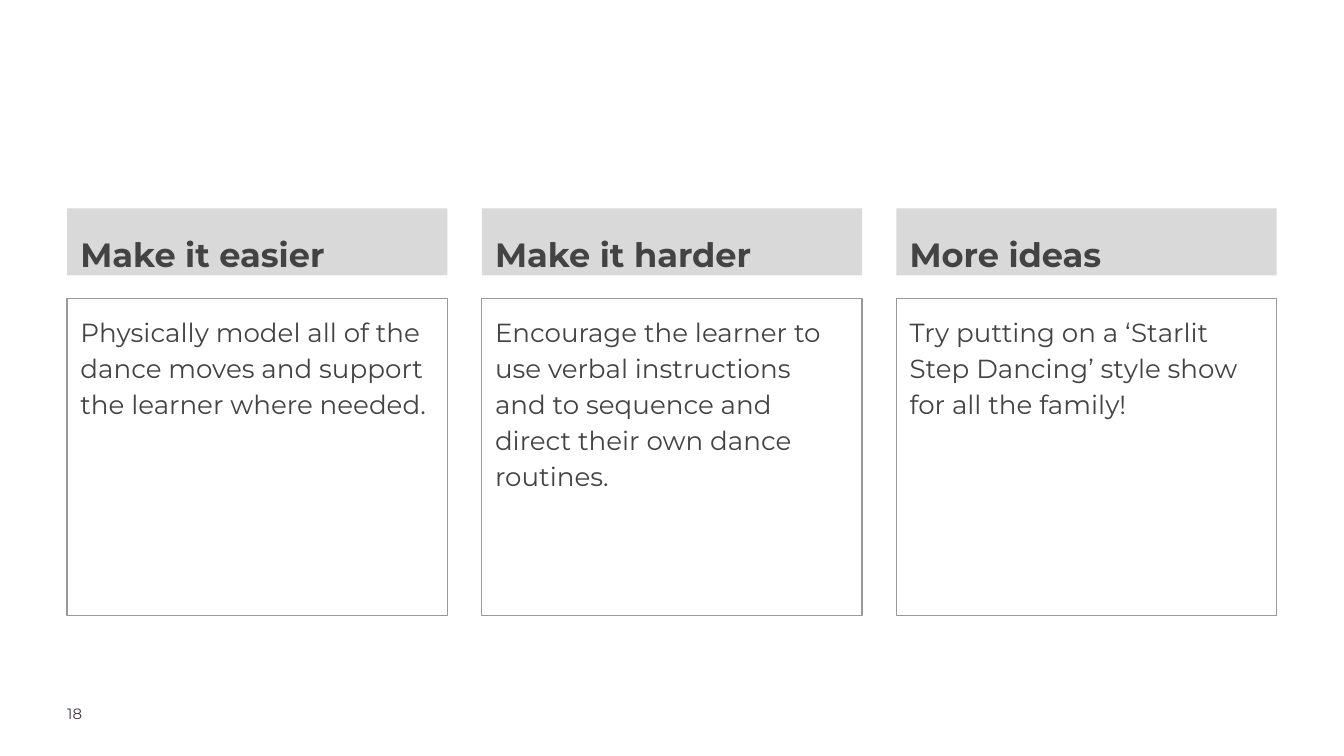
from typing import NamedTuple

from pptx import Presentation
from pptx.dml.color import RGBColor
from pptx.enum.shapes import MSO_SHAPE as Shape
from pptx.enum.text import MSO_ANCHOR as Anchor, PP_ALIGN as Align
from pptx.util import Inches, Pt

WIDTH = 10
HEIGHT = WIDTH * 9 / 16
FONT = "Montserrat"
GREY = "434343"
LEFT, CARD, COLS = 0.5, 2.83, 3
STEP = (WIDTH - 2 * LEFT - CARD) / (COLS - 1)
INSET = 0.1


class Box(NamedTuple):
    left: float
    top: float
    width: float
    height: float


class Style(NamedTuple):
    size: float
    color: str
    bold: bool = False
    lead: float = 1.0
    after: float = 0


class Card(NamedTuple):
    head: str
    body: str


HEAD = Style(18, GREY, True, 1.3)
BODY = Style(14, GREY, False, 1.15, 6)
PAGE = Style(8, "4B3241")

CARDS = [
    Card("Make it easier",
         "Physically model all of the dance moves and support "
         "the learner where needed."),
    Card("Make it harder",
         "Encourage the learner to use verbal instructions and to sequence "
         "and direct their own dance routines."),
    Card("More ideas",
         "Try putting on a ‘Starlit Step Dancing’ style show "
         "for all the family!"),
]


def rgb(code: str) -> RGBColor:
    return RGBColor.from_string(code)


def write(frame, text: str, style: Style, inset: float = INSET) -> None:
    frame.word_wrap = True
    frame.vertical_anchor = Anchor.TOP
    frame.margin_left = frame.margin_right = Inches(inset)
    frame.margin_top = frame.margin_bottom = Inches(inset)
    para = frame.paragraphs[0]
    para.alignment = Align.LEFT
    para.line_spacing = style.lead
    para.space_after = Pt(style.after)
    run = para.add_run()
    run.text = text
    run.font.name = FONT
    run.font.size = Pt(style.size)
    run.font.bold = style.bold
    run.font.color.rgb = rgb(style.color)


def panel(slide, box: Box, text: str, style: Style,
          fill: str = "", line: str = "") -> None:
    shape = slide.shapes.add_shape(Shape.RECTANGLE, *map(Inches, box))
    shape.shadow.inherit = False
    if fill:
        shape.fill.solid()
        shape.fill.fore_color.rgb = rgb(fill)
    else:
        shape.fill.background()
    if line:
        shape.line.color.rgb = rgb(line)
        shape.line.width = Pt(0.75)
    else:
        shape.line.fill.background()
    write(shape.text_frame, text, style)


def main() -> None:
    deck = Presentation()
    deck.slide_width, deck.slide_height = Inches(WIDTH), Inches(HEIGHT)
    slide = deck.slides.add_slide(deck.slide_layouts[6])

    for col, card in enumerate(CARDS):
        left = LEFT + col * STEP
        panel(slide, Box(left, 1.55, CARD, 0.5), card.head, HEAD,
              fill="D9D9D9")
        panel(slide, Box(left, 2.22, CARD, 2.36), card.body, BODY,
              line="999999")

    page = slide.shapes.add_textbox(*map(Inches, Box(LEFT, 5.24, 0.79, 0.2)))
    write(page.text_frame, "18", PAGE, inset=0)

    deck.save("out.pptx")


if __name__ == "__main__":
    main()
